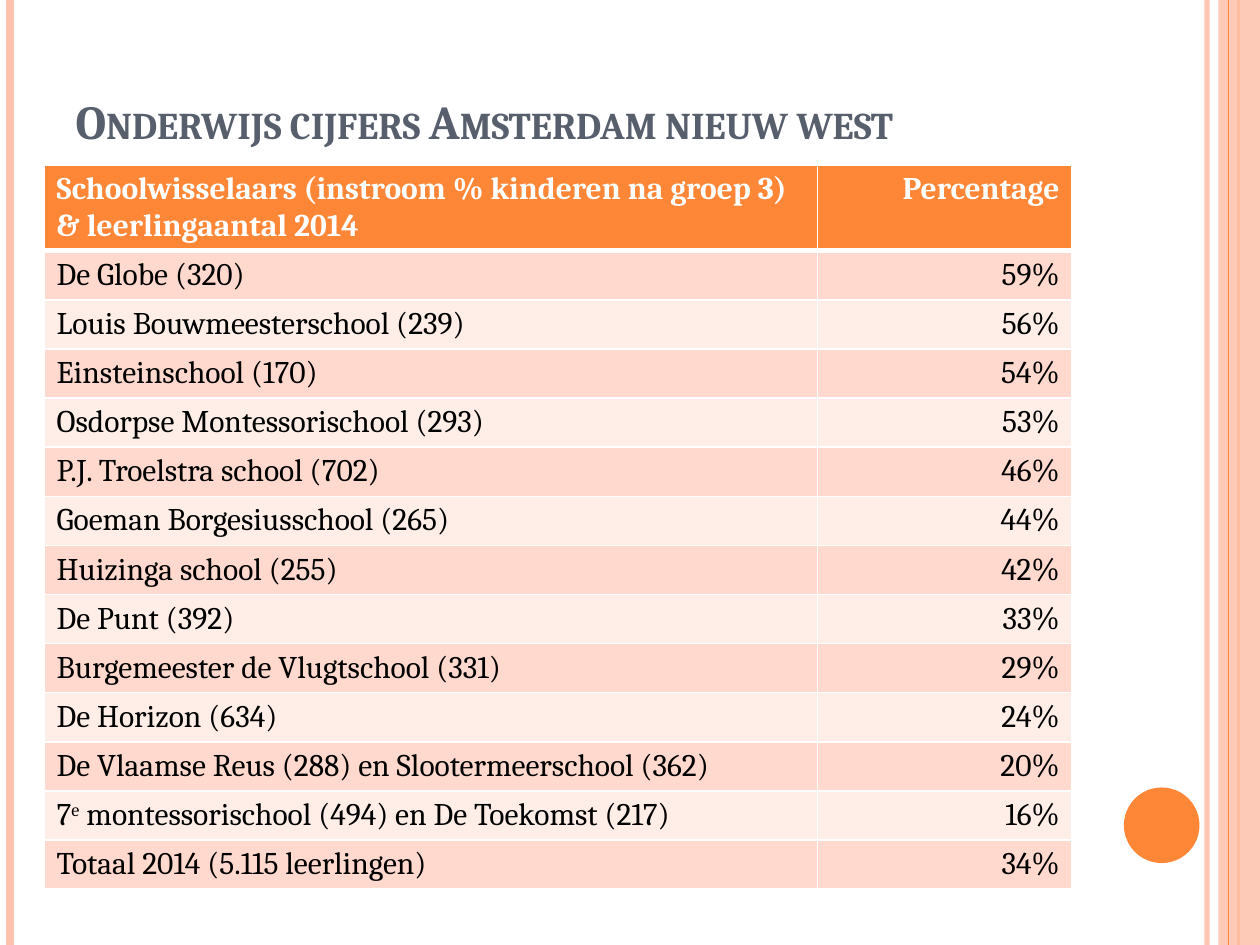
import pptx
import pptx.chart.data
import pptx.dml.color
import pptx.enum.shapes
import pptx.enum.text
import pptx.oxml
import pptx.oxml.ns
import pptx.util
from lxml import etree

RGBColor = pptx.dml.color.RGBColor
Inches, Pt = pptx.util.Inches, pptx.util.Pt
ALIGN = pptx.enum.text.PP_ALIGN
SHAPES = pptx.enum.shapes.MSO_SHAPE
qn = pptx.oxml.ns.qn

ORANGE = RGBColor(0xFE, 0x86, 0x37)
PEACH = RGBColor(0xFE, 0xC3, 0xAE)
SLATE = RGBColor(0x57, 0x5F, 0x6D)
BAND_DARK = RGBColor(0xFF, 0xD9, 0xCE)
BAND_LIGHT = RGBColor(0xFF, 0xED, 0xE8)
WHITE = RGBColor(0xFF, 0xFF, 0xFF)
BLACK = RGBColor(0, 0, 0)

WIDTH, HEIGHT = 10, 7.5
TITLE = "Onderwijs cijfers Amsterdam nieuw west"
HEADER = ("Schoolwisselaars (instroom % kinderen na groep 3) & leerlingaantal 2014", "Percentage")
SCHOOLS = [
    ("De Globe (320)", "59%"),
    ("Louis Bouwmeesterschool (239)", "56%"),
    ("Einsteinschool (170)", "54%"),
    ("Osdorpse Montessorischool (293)", "53%"),
    ("P.J. Troelstra school (702)", "46%"),
    ("Goeman Borgesiusschool (265)", "44%"),
    ("Huizinga school (255)", "42%"),
    ("De Punt (392)", "33%"),
    ("Burgemeester de Vlugtschool (331)", "29%"),
    ("De Horizon (634)", "24%"),
    ("De Vlaamse Reus (288) en Slootermeerschool (362)", "20%"),
    (("7", "^e", " montessorischool (494) en De Toekomst (217)"), "16%"),
    ("Totaal 2014 (5.115 leerlingen)", "34%"),
]
STRIPES = [  # x, colour, points, opacity in percent
    (9.58, PEACH, 3, 93),
    (0.08, PEACH, 4.5, 100),
    (9.83, ORANGE, 1.5, 100),
    (9.75, ORANGE, 0.75, 100),
]
TABLE_LEFT, TABLE_TOP = 0.35, 1.31
COLUMNS = (6.14, 2.02)
HEADER_HEIGHT, ROW_HEIGHT = 0.68, 0.39


def write(frame, text, size=18, color=BLACK, bold=False, align=ALIGN.LEFT, small_caps=False):
    """Write text, or a tuple of runs where ^ marks a superscript."""
    paragraph = frame.paragraphs[0]
    paragraph.alignment = align
    for part in (text,) if isinstance(text, str) else text:
        run = paragraph.add_run()
        run.text = part.removeprefix("^")
        run.font.name, run.font.size, run.font.bold = "Cambria", Pt(size), bold
        run.font.color.rgb = color
        if part.startswith("^"):
            run.font._element.set("baseline", "30000")
        if small_caps:
            run.font._element.set("cap", "small")


def set_opacity(shape, percent):
    """Set the opacity of the shape's first solid colour."""
    color = next(shape._element.spPr.iter(qn("a:srgbClr")))
    etree.SubElement(color, qn("a:alpha")).set("val", str(percent * 1000))


def add_stripe(slide, x, color, points, opacity):
    """Draw a vertical line over the full slide height."""
    stripe = slide.shapes.add_connector(
        pptx.enum.shapes.MSO_CONNECTOR.STRAIGHT, Inches(x), 0, Inches(x), Inches(HEIGHT))
    stripe.line.color.rgb, stripe.line.width = color, Pt(points)
    if opacity < 100:
        set_opacity(stripe, opacity)
    etree.SubElement(stripe._element.spPr, qn("a:effectLst"))


def add_filled(slide, kind, box, color):
    """Draw a preset shape without outline or shadow."""
    shape = slide.shapes.add_shape(kind, *map(Inches, box))
    shape.fill.solid()
    shape.fill.fore_color.rgb = color
    shape.line.fill.background()
    shape.shadow.inherit = False
    return shape


def set_borders(cell, **points):
    """Give the cell white borders, ahead of its fill as the schema asks."""
    properties = cell._tc.get_or_add_tcPr()
    for index, side in enumerate("LRTB"):
        border = etree.Element(qn(f"a:ln{side}"), w=str(Pt(points.get(side, 1))))
        fill = etree.SubElement(border, qn("a:solidFill"))
        etree.SubElement(fill, qn("a:srgbClr")).set("val", str(WHITE))
        properties.insert(index, border)


def add_school_table(slide):
    """Build the table of schools and their percentages."""
    rows = [HEADER] + SCHOOLS
    heights = [HEADER_HEIGHT] + [ROW_HEIGHT] * len(SCHOOLS)
    table = slide.shapes.add_table(
        len(rows), len(COLUMNS), Inches(TABLE_LEFT), Inches(TABLE_TOP),
        Inches(sum(COLUMNS)), Inches(sum(heights))).table
    for column, width in zip(table.columns, COLUMNS):
        column.width = Inches(width)
    for r, (row, height) in enumerate(zip(rows, heights)):
        table.rows[r].height = Inches(height)
        heading = r == 0
        for c, text in enumerate(row):
            cell = table.cell(r, c)
            cell.fill.solid()
            cell.fill.fore_color.rgb = ORANGE if heading else BAND_DARK if r % 2 else BAND_LIGHT
            set_borders(cell, T=3 if r == 1 else 1, B=3 if heading else 1)
            write(cell.text_frame, text, color=WHITE if heading else BLACK, bold=heading,
                  align=ALIGN.RIGHT if c else ALIGN.LEFT)


def main():
    """Build and save the slide."""
    deck = pptx.Presentation()
    deck.slide_width, deck.slide_height = Inches(WIDTH), Inches(HEIGHT)
    slide = deck.slides.add_slide(deck.slide_layouts.get_by_name("Title Only"))

    for stripe in STRIPES[:3]:
        add_stripe(slide, *stripe)
    band = add_filled(slide, SHAPES.RECTANGLE, (9.67, 0, 0.33, HEIGHT), PEACH)
    set_opacity(band, 87)
    add_stripe(slide, *STRIPES[3])
    add_filled(slide, SHAPES.OVAL, (8.92, 6.25, 0.6, 0.6), ORANGE)

    title = slide.shapes.title
    title.left, title.top, title.width, title.height = map(Inches, (0.5, 0.68, 8.17, 0.55))
    title.text_frame.auto_size = pptx.enum.text.MSO_AUTO_SIZE.NONE
    title.text_frame.vertical_anchor = pptx.enum.text.MSO_ANCHOR.BOTTOM
    write(title.text_frame, TITLE, size=27, color=SLATE, bold=True, small_caps=True)

    add_school_table(slide)
    deck.save("out.pptx")


if __name__ == "__main__":
    main()
